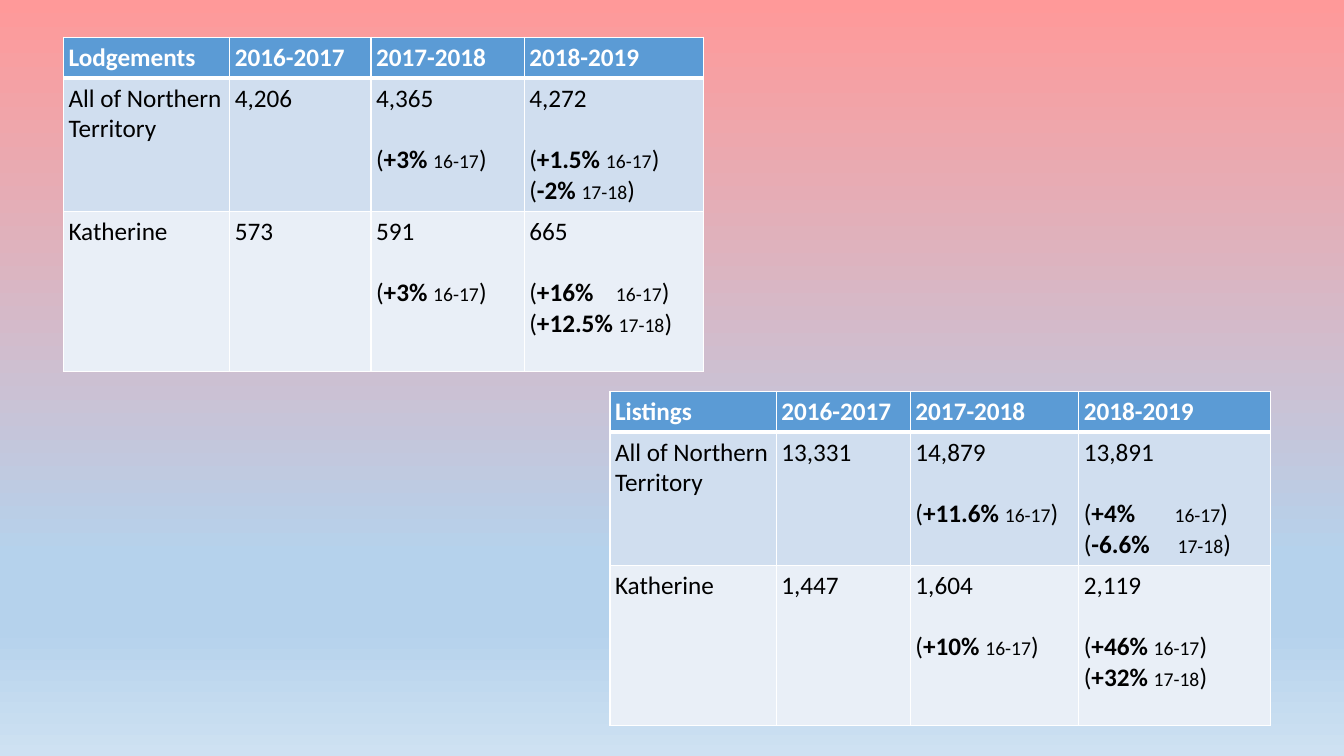
"""Build a slide with two tables of lodgements and listings by year."""
import pptx
import pptx.dml.color
import pptx.oxml
import pptx.oxml.ns
import pptx.util
from pptx.util import Inches

COLORS = {
    "header": "5B9BD5",
    "territory": "D0DEEF",
    "katherine": "E9EFF7",
    "white": "FFFFFF",
    "black": "000000",
}
BACKGROUND_STOPS = [(0, "FF9999"), (74, "B5D2EC"), (83, "B5D2EC"), (100, "CEE1F2")]
ROW_FILLS = ["header", "territory", "katherine"]
ROW_HEIGHTS = [0.4, 1.17, 1.59]
YEARS = ["2016-2017", "2017-2018", "2018-2019"]
FONT = "Calibri"
BLANK_LINE = 22

# Each change holds a percentage, the year compared with and an optional tab stop.
LODGEMENTS = [
    ["Lodgements", *YEARS],
    ["All of Northern Territory", "4,206",
     ("4,365", [("+3%", "16-17", None)]),
     ("4,272", [("+1.5%", "16-17", None), ("-2%", "17-18", None)])],
    ["Katherine", "573",
     ("591", [("+3%", "16-17", None)]),
     ("665", [("+16%", "16-17", 0.86), ("+12.5%", "17-18", None)])],
]
LISTINGS = [
    ["Listings", *YEARS],
    ["All of Northern Territory", "13,331",
     ("14,879", [("+11.6%", "16-17", None)]),
     ("13,891", [("+4%", "16-17", 0.9), ("-6.6%", "17-18", 0.93)])],
    ["Katherine", "1,447",
     ("1,604", [("+10%", "16-17", None)]),
     ("2,119", [("+46%", "16-17", None), ("+32%", "17-18", None)])],
]


def make_element(tag, parent=None, **attributes):
    """Create a drawing element, appended to its parent if one is given."""
    element = pptx.oxml.parse_xml(f"<a:{tag} {pptx.oxml.ns.nsdecls('a')}/>")
    for name, value in attributes.items():
        element.set(name, str(value))
    if parent is not None:
        parent.append(element)
    return element


def paint_background(slide):
    """Fill the slide with a vertical gradient."""
    fill = slide.background.fill
    fill.gradient()
    fill.gradient_angle = 270
    stop_list = slide.element.find(".//" + pptx.oxml.ns.qn("a:gsLst"))
    for stop in list(stop_list):
        stop_list.remove(stop)
    for position, color in BACKGROUND_STOPS:
        stop = make_element("gs", stop_list, pos=position * 1000)
        make_element("srgbClr", stop, val=color)


def add_run(paragraph, text, color, size=18, bold=False):
    """Add a formatted run to a paragraph."""
    run = paragraph.add_run()
    run.text = text
    run.font.name = FONT
    run.font.size = pptx.util.Pt(size)
    run.font.bold = bold
    run.font.color.rgb = pptx.dml.color.RGBColor.from_string(COLORS[color])


def add_change(text_frame, percentage, year, tab_stop):
    """Add a paragraph with a percentage change against an earlier year."""
    paragraph = text_frame.add_paragraph()
    if tab_stop:
        tab_list = make_element("tabLst", paragraph._p.get_or_add_pPr())
        make_element("tab", tab_list, pos=Inches(tab_stop), algn="l")
    add_run(paragraph, "(", "black")
    add_run(paragraph, percentage + ("\t" if tab_stop else " "), "black", bold=True)
    add_run(paragraph, year, "black", size=14)
    add_run(paragraph, ")", "black")
    return paragraph


def set_borders(cell, row_index):
    """Draw white cell borders, thick between the header and the body."""
    widths = {"lnL": 1, "lnR": 1, "lnT": 3 if row_index == 1 else 1,
              "lnB": 3 if row_index == 0 else 1}
    properties = cell._tc.get_or_add_tcPr()
    for index, (side, width) in enumerate(widths.items()):
        line = make_element(side, w=pptx.util.Pt(width))
        make_element("srgbClr", make_element("solidFill", line), val=COLORS["white"])
        properties.insert(index, line)


def fill_cell(cell, content, row_index):
    """Format a cell and write its figure and any changes."""
    cell.margin_left = cell.margin_right = Inches(0.05)
    cell.margin_top = cell.margin_bottom = Inches(0.05)
    cell.fill.solid()
    cell.fill.fore_color.rgb = pptx.dml.color.RGBColor.from_string(
        COLORS[ROW_FILLS[row_index]])
    set_borders(cell, row_index)
    figure, changes = (content, []) if isinstance(content, str) else content
    is_header = row_index == 0
    add_run(cell.text_frame.paragraphs[0], figure,
            "white" if is_header else "black", bold=is_header)
    paragraphs = [add_change(cell.text_frame, *change) for change in changes]
    if paragraphs:
        paragraphs[0].space_before = pptx.util.Pt(BLANK_LINE)


def add_year_table(slide, left, top, column_widths, rows):
    """Add a table that compares figures across years."""
    table = slide.shapes.add_table(
        len(rows), len(column_widths), Inches(left), Inches(top),
        Inches(sum(column_widths)), Inches(sum(ROW_HEIGHTS))).table
    table.horz_banding = False
    for column, width in zip(table.columns, column_widths):
        column.width = Inches(width)
    for row_index, contents in enumerate(rows):
        table.rows[row_index].height = Inches(ROW_HEIGHTS[row_index])
        for column_index, content in enumerate(contents):
            fill_cell(table.cell(row_index, column_index), content, row_index)


def main():
    """Create the presentation and save it."""
    presentation = pptx.Presentation()
    presentation.slide_width = Inches(13.33)
    presentation.slide_height = Inches(7.5)
    slide = presentation.slides.add_slide(presentation.slide_layouts[6])
    paint_background(slide)
    add_year_table(slide, 0.63, 0.37, [1.65, 1.4, 1.52, 1.78], LODGEMENTS)
    add_year_table(slide, 6.05, 3.88, [1.65, 1.33, 1.67, 1.9], LISTINGS)
    presentation.save("out.pptx")


if __name__ == "__main__":
    main()
